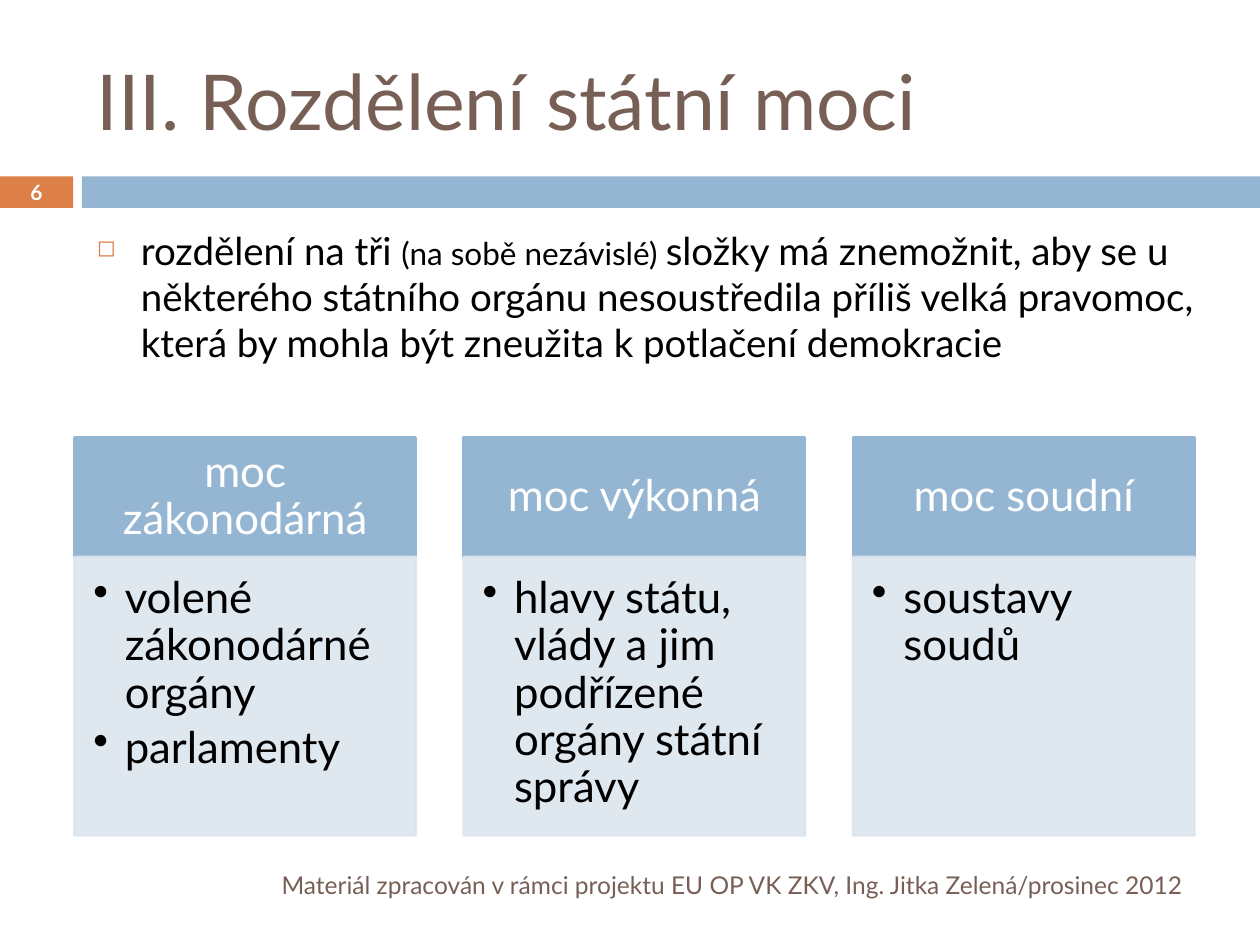
"""Build the slide on the three branches of state power."""
from dataclasses import dataclass

from lxml.etree import SubElement
from pptx import Presentation
from pptx.dml.color import RGBColor
from pptx.enum.shapes import MSO_SHAPE
from pptx.enum.text import MSO_ANCHOR, PP_ALIGN
from pptx.oxml.ns import qn
from pptx.util import Inches, Pt

TITLE = "III. Rozdělení státní moci"
NUMBER = "6"
INTRO = [
    ("rozdělení na tři ", 22),
    ("(na sobě nezávislé) ", 18),
    ("složky má znemožnit, aby se u některého státního orgánu nesoustředila "
     "příliš velká pravomoc, která by mohla být zneužita k potlačení demokracie", 22),
]
BRANCHES = [
    ("moc zákonodárná", ["volené zákonodárné orgány", "parlamenty"]),
    ("moc výkonná", ["hlavy státu, vlády a jim podřízené orgány státní správy"]),
    ("moc soudní", ["soustavy soudů"]),
]
FOOTER = "Materiál zpracován v rámci projektu EU OP VK ZKV, Ing. Jitka Zelená/prosinec 2012"


@dataclass(frozen=True)
class Theme:
    font: str = "Lato"
    brown: str = "775F55"
    orange: str = "DD8047"
    blue: str = "94B6D2"
    pale: str = "DCE5EE"
    white: str = "FFFFFF"
    black: str = "000000"
    title: float = 44
    card: float = 25
    footer: float = 14
    number: float = 12


T = Theme()
WIDTH, HEIGHT = 10, 7.5
BAND_TOP, BAND_HEIGHT = 1.4, 0.25
TAB_WIDTH, BAND_LEFT = 0.58, 0.65
TEXT_LEFT = 0.67
GRID_LEFT, GRID_TOP, COL_WIDTH, COL_STEP = 0.59, 3.47, 2.71, 3.09
HEAD_HEIGHT, BODY_HEIGHT = 0.95, 2.21
HEAD_INSETS = (0.19, 0.11, 0.19, 0.11)
BODY_INSETS = (0.15, 0.15, 0.19, 0.22)


def style_run(r, size, color, bold=False):
    r.font.name = T.font
    r.font.size = Pt(size)
    r.font.bold = bold
    r.font.color.rgb = RGBColor.from_string(color)


def set_frame(sp, anchor, insets=(0.1, 0.05, 0.1, 0.05)):
    tf = sp.text_frame
    tf.word_wrap = True
    tf.vertical_anchor = anchor
    tf.margin_left, tf.margin_top, tf.margin_right, tf.margin_bottom = map(Inches, insets)
    return tf


def add_text(slide, box, anchor=MSO_ANCHOR.MIDDLE):
    return set_frame(slide.shapes.add_textbox(*map(Inches, box)), anchor)


def add_rect(slide, box, color, outlined=False, alpha=None):
    sp = slide.shapes.add_shape(MSO_SHAPE.RECTANGLE, *map(Inches, box))
    sp.shadow.inherit = False
    sp.fill.solid()
    sp.fill.fore_color.rgb = RGBColor.from_string(color)
    if outlined:
        sp.line.color.rgb = RGBColor.from_string(color)
        sp.line.width = Pt(1.5)
    else:
        sp.line.fill.background()
    if alpha:
        for clr in sp._element.spPr.iter(qn("a:srgbClr")):
            SubElement(clr, qn("a:alpha"), val=str(alpha * 1000))
    return sp


def write(tf, lines, size, color, align=PP_ALIGN.LEFT, bold=False):
    tf.text = "\n".join(lines)
    for p in tf.paragraphs:
        p.alignment = align
        for r in p.runs:
            style_run(r, size, color, bold)


def add_bullet(p, char, indent, color=None, percent=None):
    pPr = p._p.get_or_add_pPr()
    pPr.set("marL", str(Inches(indent)))
    pPr.set("indent", str(-Inches(indent)))
    if color:
        SubElement(SubElement(pPr, qn("a:buClr")), qn("a:srgbClr"), val=color)
    if percent:
        SubElement(pPr, qn("a:buSzPct"), val=str(percent * 1000))
    SubElement(pPr, qn("a:buChar"), char=char)


def add_header(slide):
    add_rect(slide, (0, BAND_TOP, TAB_WIDTH, BAND_HEIGHT), T.orange)
    add_rect(slide, (BAND_LEFT, BAND_TOP, WIDTH - BAND_LEFT, BAND_HEIGHT), T.blue)
    write(add_text(slide, (TEXT_LEFT, 0.25, 8.92, 1.08)), [TITLE], T.title, T.brown)
    write(add_text(slide, (0, BAND_TOP, TAB_WIDTH, BAND_HEIGHT)), [NUMBER],
          T.number, T.white, PP_ALIGN.CENTER, True)


def add_intro(slide):
    p = add_text(slide, (TEXT_LEFT, 1.75, 9.13, 1.61), MSO_ANCHOR.TOP).paragraphs[0]
    p.space_before = Pt(7)
    add_bullet(p, "◻", 0.35, T.orange, 60)
    for text, size in INTRO:
        r = p.add_run()
        r.text = text
        style_run(r, size, T.black)


def add_branch(slide, col, name, points):
    left = GRID_LEFT + col * COL_STEP
    head = add_rect(slide, (left, GRID_TOP, COL_WIDTH, HEAD_HEIGHT), T.blue, True)
    body = add_rect(slide, (left, GRID_TOP + HEAD_HEIGHT, COL_WIDTH, BODY_HEIGHT),
                    T.pale, True, 90)
    head_tf = set_frame(head, MSO_ANCHOR.MIDDLE, HEAD_INSETS)
    body_tf = set_frame(body, MSO_ANCHOR.TOP, BODY_INSETS)
    write(head_tf, [name], T.card, T.white, PP_ALIGN.CENTER)
    write(body_tf, points, T.card, T.black)
    head_tf.paragraphs[0].line_spacing = 0.9
    for p in body_tf.paragraphs:
        p.line_spacing = 0.9
        p.space_after = Pt(4.5)
        add_bullet(p, "•", 0.25)


def main():
    prs = Presentation()
    prs.slide_width, prs.slide_height = Inches(WIDTH), Inches(HEIGHT)
    slide = prs.slides.add_slide(prs.slide_layouts[6])
    add_header(slide)
    add_intro(slide)
    for col, (name, points) in enumerate(BRANCHES):
        add_branch(slide, col, name, points)
    write(add_text(slide, (1.46, 6.82, 8.03, 0.4)), [FOOTER],
          T.footer, T.brown, PP_ALIGN.RIGHT)
    prs.save("out.pptx")


if __name__ == "__main__":
    main()
